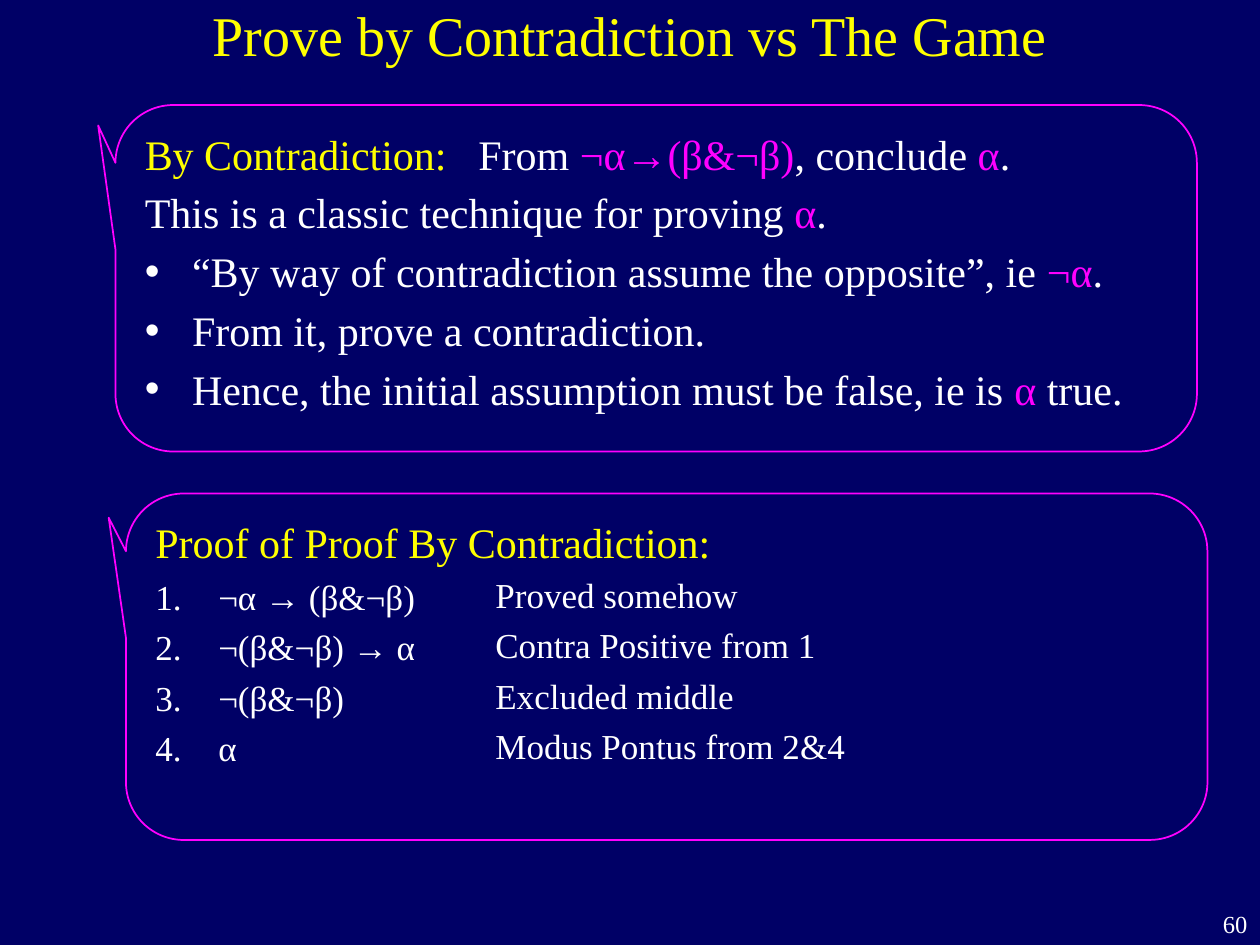
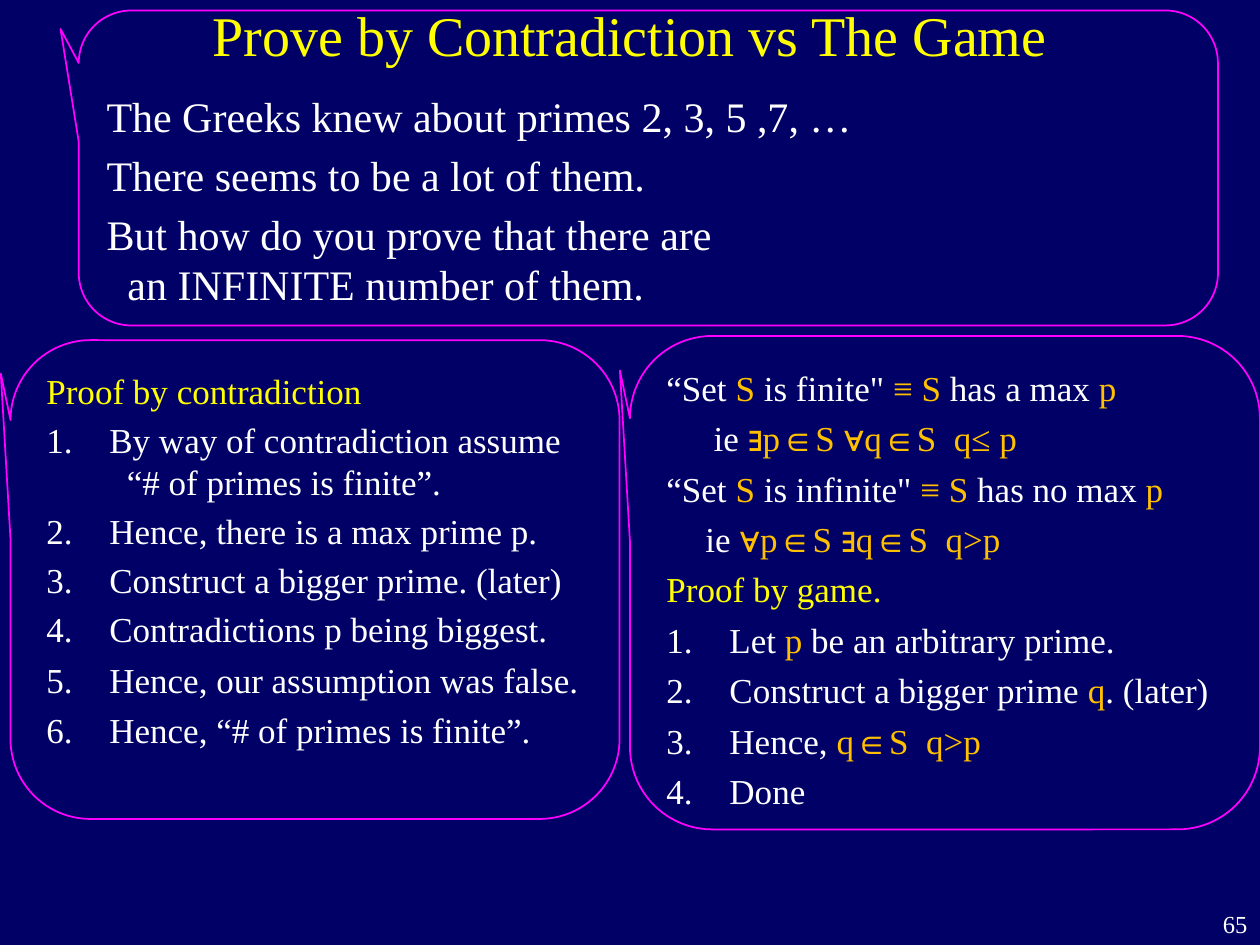
from dataclasses import dataclass

from lxml import etree
from pptx import Presentation
from pptx.dml.color import RGBColor
from pptx.enum import shapes, text
from pptx.oxml import ns
from pptx.util import Pt

COLORS = {
    "navy": "000066",
    "white": "FFFFFF",
    "yellow": "FFFF00",
    "magenta": "FF00FF",
    "gold": "FFC000",
}
SERIF, SANS = "Times New Roman", "Arial"
TITLE = "Prove by Contradiction vs The Game"


@dataclass
class Line:
    """One paragraph: plain strings are white, tuples are (text, color[, font])."""
    spans: tuple
    marker: str = ""
    left: float = 0
    hang: float = 0
    size: float = 20
    before: float = 4.8


def plain(*spans, **options):
    return Line(spans, **options)


def heading(words, **options):
    return Line(((words, "yellow"),), **options)


def bullet(*spans, **options):
    return Line(spans, marker="dot", left=27, hang=27, **options)


def step(*spans, **options):
    return Line(spans, marker="number", left=36, hang=36, **options)


def magenta(words):
    return words, "magenta"


def gold(words, font=SERIF):
    return words, "gold", font


def rgb(name):
    return RGBColor.from_string(COLORS[name])


def add_span(para, words, size, color="white", font=SERIF):
    for index, piece in enumerate(words.split("\n")):
        if index:
            para.add_line_break()
        span = para.add_run()
        span.text = piece
        span.font.name = font
        span.font.size = Pt(size)
        span.font.color.rgb = rgb(color)


def set_marker(para, line):
    """Apply the indents and the bullet or automatic number."""
    properties = para._p.get_or_add_pPr()
    properties.set("marL", str(Pt(line.left)))
    properties.set("indent", str(Pt(-line.hang)))
    if line.marker == "dot":
        etree.SubElement(properties, ns.qn("a:buFont"), typeface=SANS)
        etree.SubElement(properties, ns.qn("a:buChar"), char="•")
    elif line.marker == "number":
        etree.SubElement(properties, ns.qn("a:buFont"), typeface=SERIF)
        etree.SubElement(properties, ns.qn("a:buAutoNum"), type="arabicPeriod")
    else:
        etree.SubElement(properties, ns.qn("a:buNone"))


def write(shape, lines, align=text.PP_ALIGN.LEFT, top_margin=3.6):
    frame = shape.text_frame
    frame.word_wrap = True
    frame.auto_size = text.MSO_AUTO_SIZE.NONE
    frame.vertical_anchor = text.MSO_ANCHOR.TOP
    frame.margin_top = Pt(top_margin)
    for index, line in enumerate(lines):
        para = frame.add_paragraph() if index else frame.paragraphs[0]
        para.alignment = align
        para.space_before = Pt(line.before)
        set_marker(para, line)
        for span in line.spans:
            parts = (span,) if isinstance(span, str) else span
            add_span(para, parts[0], line.size, *parts[1:])


def add_text(page, left, top, width, height, lines, **options):
    box = page.shapes.add_textbox(Pt(left), Pt(top), Pt(width), Pt(height))
    write(box, lines, **options)


def add_callout(page, left, top, width, height, lines, tail=-0.43, **options):
    box = page.shapes.add_shape(
        shapes.MSO_SHAPE.ROUNDED_RECTANGULAR_CALLOUT,
        Pt(left), Pt(top), Pt(width), Pt(height))
    for index, value in enumerate((-0.516, tail, 0.167)):
        box.adjustments[index] = value
    box.shadow.inherit = False
    box.fill.background()
    box.line.color.rgb = rgb("magenta")
    box.line.width = Pt(1)
    write(box, lines, **options)


def add_page(deck, number):
    """Add a slide with the shared title and page number."""
    page = deck.slides.add_slide(deck.slide_layouts[5])
    title = page.shapes.title
    title.left, title.top, title.width, title.height = map(Pt, (54, -3.6, 612, 42.5))
    write(title, [heading(TITLE, size=32, before=0)], align=text.PP_ALIGN.CENTER)
    add_text(page, 684, 516, 36, 24, [plain(number, size=14, before=0)],
             align=text.PP_ALIGN.RIGHT)
    return page


def build_technique(deck):
    page = add_page(deck, "60")

    # The rule
    add_callout(page, 66, 60, 618, 198, [
        plain(("By Contradiction:   ", "yellow"), "From ", magenta("¬α→(β&¬β)"),
              ", conclude ", magenta("α"), ".", size=24),
        plain("This is a classic technique for proving ", magenta("α"), ".", size=24),
        bullet("“By way of contradiction assume the opposite”, ie ",
               magenta("¬α"), ".", size=24),
        bullet("From it, prove a contradiction.", size=24),
        bullet("Hence, the initial assumption must be false, ie is ",
               magenta("α "), "true.", size=24),
    ], tail=-0.441)

    # Its proof, with the reason for each step alongside
    formulas = ("¬α → (β&¬β)", "¬(β&¬β) → α", "¬(β&¬β)", "α")
    reasons = ("Proved somehow", "Contra Positive from 1",
               "Excluded middle", "Modus Pontus from 2&4")
    add_callout(page, 72, 282, 618, 198,
                [heading("Proof of Proof By Contradiction:", size=24)]
                + [step(formula) for formula in formulas])
    add_text(page, 276, 324, 222, 120, [plain(reason) for reason in reasons])


def build_primes(deck):
    page = add_page(deck, "65")

    # The question
    add_callout(page, 45, 6, 651, 180, [
        plain("The Greeks knew about primes 2, 3, 5 ,7, …", size=24),
        plain("There seems to be a lot of them.", size=24),
        plain("But how do you prove that there are \nan INFINITE number of them.",
              size=24, left=12, hang=12),
    ], tail=-0.441, top_margin=37)

    # Proof by contradiction
    add_callout(page, 6, 194.4, 348, 273.6, [
        heading("Proof by contradiction"),
        step("By way of contradiction assume\n  “# of primes is finite”.", before=4),
        step("Hence, there is a max prime p.", before=4),
        step("Construct a bigger prime. (later)", before=4),
        step("Contradictions p being biggest.", before=4),
        step("Hence, our assumption was false."),
        step("Hence, “# of primes is finite”."),
    ])

    # Proof by game
    add_callout(page, 360, 192, 360, 282, [
        plain("“Set ", gold("S"), " is finite\" ", gold("≡ S"), " has a max ", gold("p")),
        plain("ie ", gold("∃", SANS), gold("p∈S ∀q∈S  q≤ p"), left=27),
        plain("“Set ", gold("S"), " is infinite\" ", gold("≡ S"), " has no max ", gold("p")),
        plain("ie ", gold("∀p∈S "), gold("∃", SANS), gold("q∈S  q>p"), left=22.2),
        heading("Proof by game."),
        step("Let ", gold("p"), " be an arbitrary prime."),
        step("Construct a bigger prime ", gold("q"), ". (later)"),
        step("Hence, ", gold("q∈S  q>p")),
        step("Done"),
    ])


def main():
    deck = Presentation()
    deck.slide_width, deck.slide_height = Pt(720), Pt(540)
    background = deck.slide_master.background.fill
    background.solid()
    background.fore_color.rgb = rgb("navy")
    build_technique(deck)
    build_primes(deck)
    deck.save("out.pptx")


if __name__ == "__main__":
    main()
